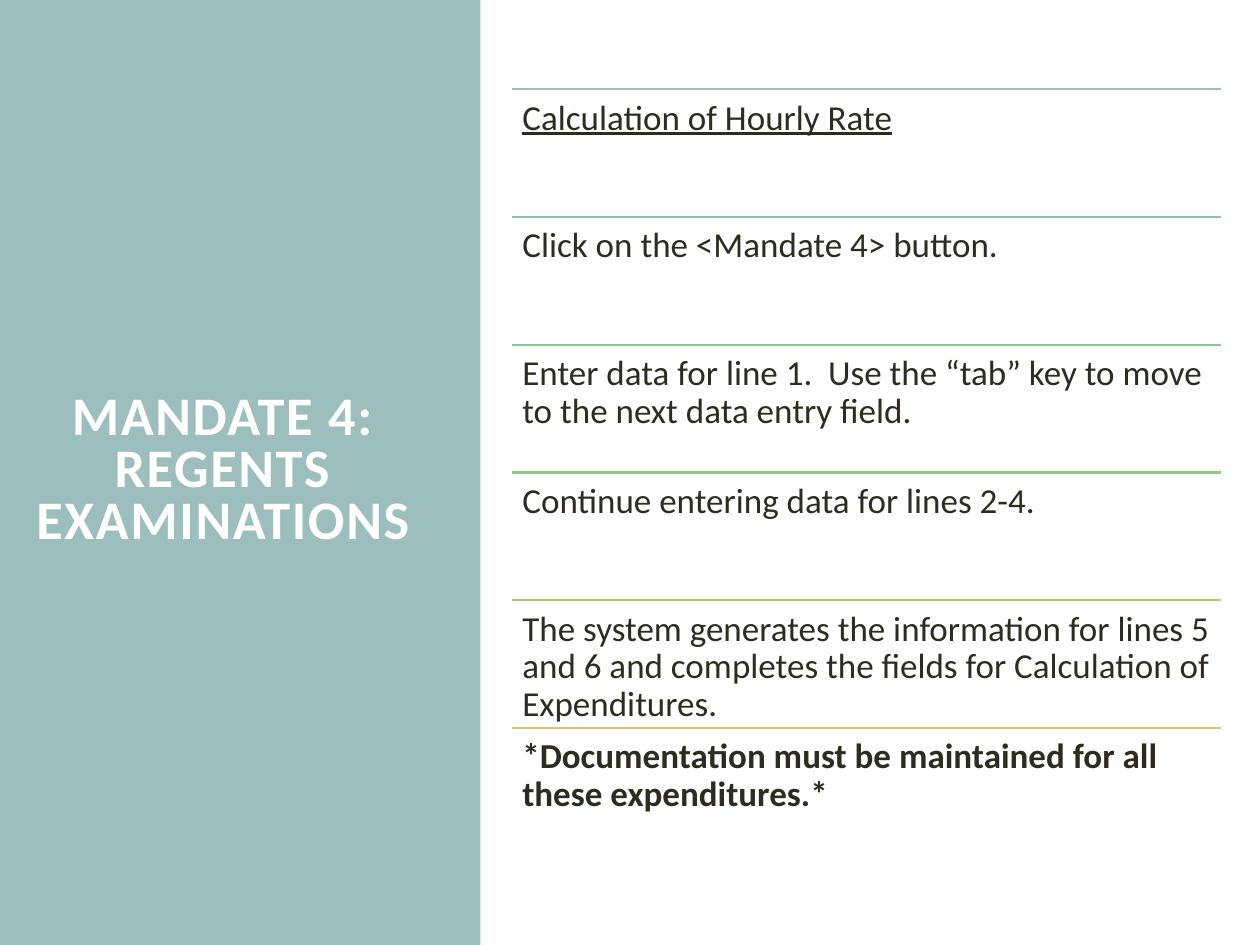
import pptx
import pptx.util
import pptx.dml.color
import pptx.enum.shapes
import pptx.enum.text
import pptx.oxml.ns
import lxml.etree

Pt = pptx.util.Pt
RGB = pptx.dml.color.RGBColor.from_string

THEME = {
    "font": "Calibri",
    "panel": "9CBEBD",
    "heading": "FFFFFF",
    "body": "2E2B21",
    "heading_size": 31,
    "body_size": 20,
    "rule_width": 1.25,
}

HEADING = "MANDATE 4: REGENTS EXAMINATIONS"
STEPS = [
    ("Calculation of Hourly Rate", "9CBEBD", {"underline": True}),
    ("Click on the <Mandate 4> button.", "93C1AD", {}),
    ("Enter data for line 1.  Use the “tab” key to move to the next data entry field.", "8AC593", {}),
    ("Continue entering data for lines 2-4.", "93C980", {}),
    ("The system generates the information for lines 5 and 6 and completes the fields "
     "for Calculation of Expenditures.", "B0CD76", {}),
    ("*Documentation must be maintained for all these expenditures.*", "D2CB6C", {"bold": True}),
]

STEPS_LEFT, STEPS_TOP, STEPS_WIDTH, STEP_HEIGHT = 292.5, 51, 405, 73
STEP_INSET = 6


def add_text(slide, box, text, size, color, line_spacing, **emphasis):
    text_box = slide.shapes.add_textbox(*map(Pt, box))
    frame = text_box.text_frame
    frame.word_wrap = True
    frame.text = text
    paragraph = frame.paragraphs[0]
    paragraph.line_spacing = line_spacing
    font = paragraph.runs[0].font
    font.name = THEME["font"]
    font.size = Pt(size)
    font.color.rgb = RGB(color)
    for trait, value in emphasis.items():
        setattr(font, trait, value)
    return frame


def add_panel(slide):
    panel = slide.shapes.add_shape(
        pptx.enum.shapes.MSO_SHAPE.RECTANGLE, 0, 0, Pt(274.5), Pt(540))
    panel.shadow.inherit = False
    panel.fill.solid()
    panel.fill.fore_color.rgb = RGB(THEME["panel"])
    panel.line.fill.background()


def add_heading(slide):
    frame = add_text(slide, (10.5, 50.5, 234, 438.5), HEADING,
                     THEME["heading_size"], THEME["heading"], 0.8, bold=True)
    frame.vertical_anchor = pptx.enum.text.MSO_ANCHOR.MIDDLE
    paragraph = frame.paragraphs[0]
    paragraph.alignment = pptx.enum.text.PP_ALIGN.CENTER
    paragraph.runs[0].font._element.set("spc", "100")


def add_rule(slide, top, color):
    rule = slide.shapes.add_connector(
        pptx.enum.shapes.MSO_CONNECTOR.STRAIGHT,
        Pt(STEPS_LEFT), Pt(top), Pt(STEPS_LEFT + STEPS_WIDTH), Pt(top))
    rule.line.color.rgb = RGB(color)
    rule.line.width = Pt(THEME["rule_width"])
    lxml.etree.SubElement(rule._element.spPr, pptx.oxml.ns.qn("a:effectLst"))


def add_step(slide, top, text, emphasis):
    frame = add_text(slide, (STEPS_LEFT, top, STEPS_WIDTH, STEP_HEIGHT), text,
                     THEME["body_size"], THEME["body"], 0.9, **emphasis)
    for side in ("left", "top", "right", "bottom"):
        setattr(frame, f"margin_{side}", Pt(STEP_INSET))


def main():
    deck = pptx.Presentation()
    deck.slide_width, deck.slide_height = Pt(720), Pt(540)
    slide = deck.slides.add_slide(deck.slide_layouts[6])
    add_panel(slide)
    add_heading(slide)
    for index, (text, rule_color, emphasis) in enumerate(STEPS):
        top = STEPS_TOP + index * STEP_HEIGHT
        add_rule(slide, top, rule_color)
        add_step(slide, top, text, emphasis)
    deck.save("out.pptx")


if __name__ == "__main__":
    main()
